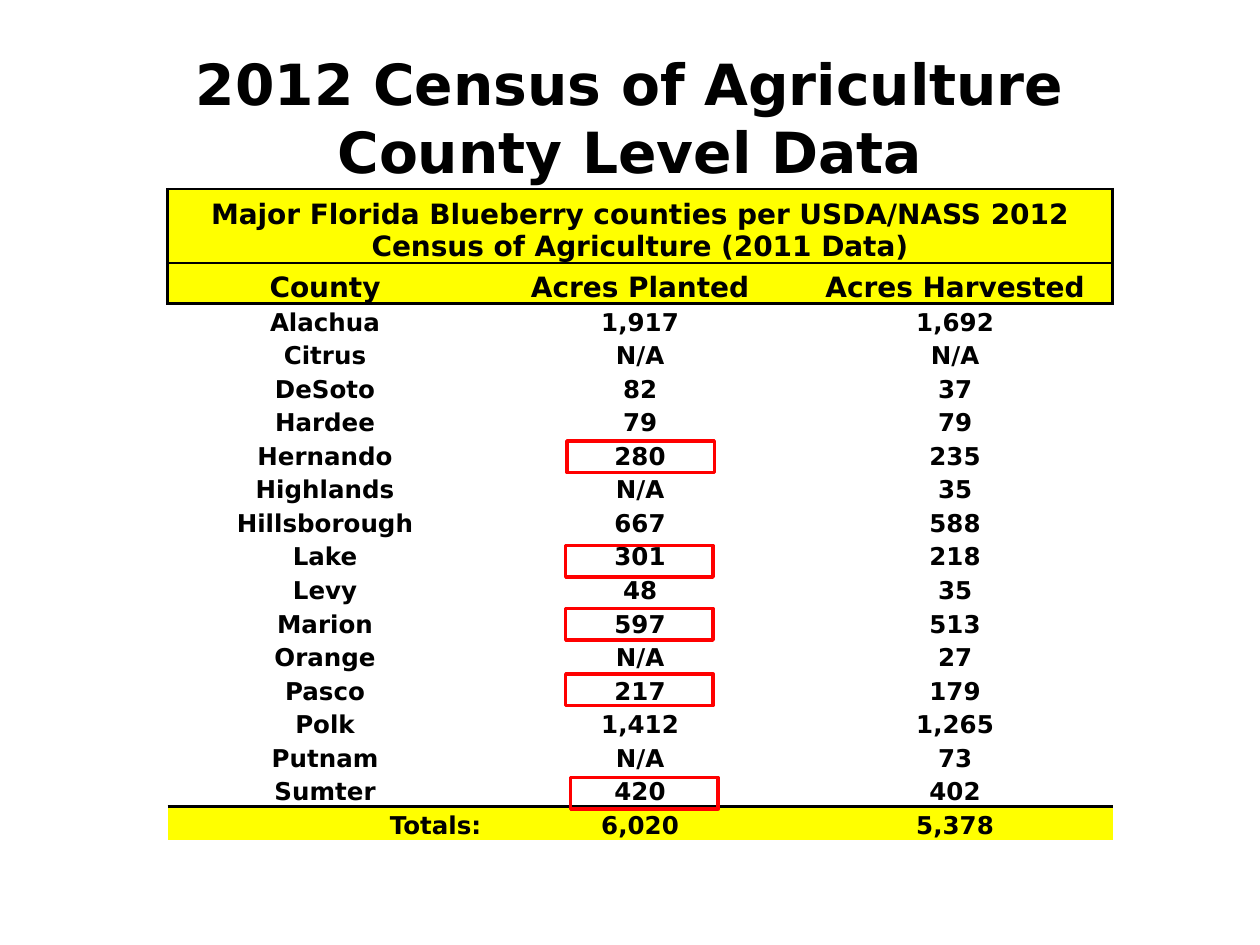
from dataclasses import dataclass

from lxml import etree
from pptx import Presentation
from pptx import util as u
from pptx.dml.color import RGBColor
from pptx.enum import shapes, text
from pptx.oxml import ns


@dataclass(frozen=True)
class Theme:
    font: str = "DejaVu Sans"
    ink: str = "000000"
    band: str = "FFFF00"
    highlight: str = "FF0000"
    title_size: float = 32.4
    heading_size: float = 16
    body_size: float = 14
    rule_width: float = 1.5
    highlight_width: float = 2


THEME = Theme()
TITLE_LINES = ["2012 Census of Agriculture", "County Level Data"]
CAPTION = ("Major Florida Blueberry counties per USDA/NASS 2012 "
           "Census of Agriculture (2011 Data)")
HEADINGS = ("County", "Acres Planted", "Acres Harvested")
COUNTIES = [
    ("Alachua", "1,917", "1,692"),
    ("Citrus", "N/A", "N/A"),
    ("DeSoto", "82", "37"),
    ("Hardee", "79", "79"),
    ("Hernando", "280", "235"),
    ("Highlands", "N/A", "35"),
    ("Hillsborough", "667", "588"),
    ("Lake", "301", "218"),
    ("Levy", "48", "35"),
    ("Marion", "597", "513"),
    ("Orange", "N/A", "27"),
    ("Pasco", "217", "179"),
    ("Polk", "1,412", "1,265"),
    ("Putnam", "N/A", "73"),
    ("Sumter", "420", "402"),
]
TOTALS = ("Totals:", "6,020", "5,378")
HIGHLIGHT_CORNERS = [(4.5, 3.5), (4.49, 4.33), (4.49, 4.83), (4.49, 5.35), (4.53, 6.17)]
TABLE_HEIGHT = 5.17
CAPTION_HEIGHT = 0.59
HEADING_HEIGHT = 0.32
NO_GRID_STYLE = "{2D5ABB26-0587-4C30-8999-92F81FD0307C}"


def add_run(paragraph, words, size):
    run = paragraph.add_run()
    run.text = words
    run.font.name = THEME.font
    run.font.size = u.Pt(size)
    run.font.bold = True
    run.font.color.rgb = RGBColor.from_string(THEME.ink)


def add_title(slide):
    title = slide.shapes.add_textbox(u.Inches(0.5), u.Inches(0.3), u.Inches(9), u.Inches(1.25))
    frame = title.text_frame
    frame.word_wrap = True
    frame.vertical_anchor = text.MSO_ANCHOR.MIDDLE
    heading = frame.paragraphs[0]
    heading.alignment = text.PP_ALIGN.CENTER
    for index, line in enumerate(TITLE_LINES):
        if index:
            heading.add_line_break()
        add_run(heading, line, THEME.title_size)


def set_borders(cell, sides):
    """Rule the given sides (letters from LRTB) and leave the others clear."""
    properties = cell._tc.get_or_add_tcPr()
    for side in "LRTB":
        rule = etree.SubElement(properties, ns.qn(f"a:ln{side}"))
        if side in sides:
            rule.set("w", str(u.Pt(THEME.rule_width)))
            fill = etree.SubElement(rule, ns.qn("a:solidFill"))
            etree.SubElement(fill, ns.qn("a:srgbClr"), val=THEME.ink)
        else:
            etree.SubElement(rule, ns.qn("a:noFill"))


def style_cell(cell, sides, banded):
    set_borders(cell, sides)
    if banded:
        cell.fill.solid()
        cell.fill.fore_color.rgb = RGBColor.from_string(THEME.band)
    else:
        cell.fill.background()
    cell.margin_left = cell.margin_right = cell.margin_top = u.Inches(0.01)
    cell.margin_bottom = 0
    cell.vertical_anchor = text.MSO_ANCHOR.BOTTOM


def write_cell(cell, words, size, alignment=text.PP_ALIGN.CENTER):
    paragraph = cell.text_frame.paragraphs[0]
    paragraph.alignment = alignment
    add_run(paragraph, words, size)


def row_sides(row, column, last_row):
    if row == 0:
        return "LRTB"
    if row == 1:
        return "TB" + {0: "L", 2: "R"}.get(column, "")
    if row in (2, last_row):
        return "T"
    return "B" if row == last_row - 1 else ""


def add_acreage_table(slide):
    records = [(CAPTION, "", ""), HEADINGS, *COUNTIES, TOTALS]
    last_row = len(records) - 1
    frame = slide.shapes.add_table(len(records), len(HEADINGS), u.Inches(1.33), u.Inches(1.5),
                                   u.Inches(7.5), u.Inches(TABLE_HEIGHT))
    table = frame.table
    table._tbl.tblPr.find(ns.qn("a:tableStyleId")).text = NO_GRID_STYLE
    table.first_row = table.horz_banding = False
    for column in table.columns:
        column.width = u.Inches(2.5)
    body_height = (TABLE_HEIGHT - CAPTION_HEIGHT - HEADING_HEIGHT) / (len(records) - 2)
    heights = [CAPTION_HEIGHT, HEADING_HEIGHT] + [body_height] * (len(records) - 2)
    table.cell(0, 0).merge(table.cell(0, 2))

    for row, record in enumerate(records):
        table.rows[row].height = u.Inches(heights[row])
        size = THEME.heading_size if row < 2 else THEME.body_size
        for column, words in enumerate(record):
            cell = table.cell(row, column)
            style_cell(cell, row_sides(row, column, last_row), row < 2 or row == last_row)
            if words:
                is_total_label = row == last_row and column == 0
                alignment = text.PP_ALIGN.RIGHT if is_total_label else text.PP_ALIGN.CENTER
                write_cell(cell, words, size, alignment)


def add_highlight(slide, left, top):
    highlight = slide.shapes.add_shape(shapes.MSO_SHAPE.RECTANGLE, u.Inches(left), u.Inches(top),
                                       u.Inches(1.17), u.Inches(0.25))
    highlight.shadow.inherit = False
    highlight.fill.background()
    highlight.line.color.rgb = RGBColor.from_string(THEME.highlight)
    highlight.line.width = u.Pt(THEME.highlight_width)


def main():
    deck = Presentation()
    deck.slide_width, deck.slide_height = u.Inches(10), u.Inches(7.5)
    slide = deck.slides.add_slide(deck.slide_layouts[6])
    add_title(slide)
    add_acreage_table(slide)
    for left, top in HIGHLIGHT_CORNERS:
        add_highlight(slide, left, top)
    deck.save("out.pptx")


if __name__ == "__main__":
    main()
